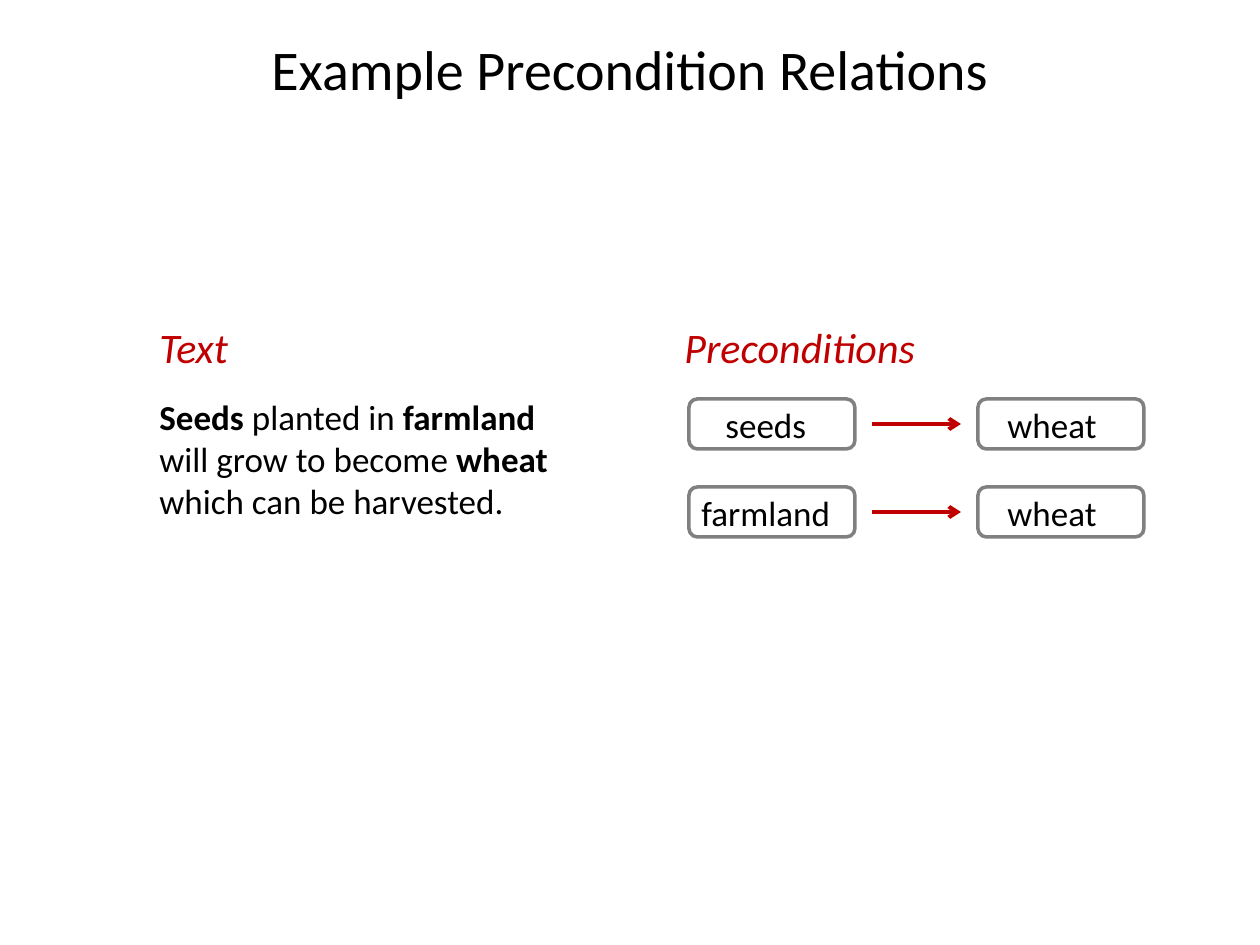
from dataclasses import dataclass

from lxml import etree
from pptx import Presentation
from pptx import util as u
from pptx.dml.color import RGBColor
from pptx.enum import shapes, text
from pptx.oxml.ns import qn

EMU_PER_PX = 914400 / 126
FONT = "Calibri"
BLACK, RED, GRAY = "000000", "C00000", "808080"
BOX_WIDTH, BOX_HEIGHT = 166, 50
CAUSE_LEFT, EFFECT_LEFT = 689, 978
ARROW_LEFT, ARROW_RIGHT = 872, 961
FIRST_TOP, ROW_PITCH = 399, 88
LABEL_HEIGHT = 58


@dataclass(frozen=True)
class Run:
    content: str
    bold: bool = False
    italic: bool = False


@dataclass(frozen=True)
class Label:
    content: str
    left: int
    width: int


@dataclass(frozen=True)
class Relation:
    cause: Label
    effect: Label


def px(length: int) -> u.Emu:
    return u.Emu(round(length * EMU_PER_PX))


def color(value: str) -> RGBColor:
    return RGBColor.from_string(value)


def add_runs(paragraph, runs: list[Run], size: int, fill: str) -> None:
    for item in runs:
        run = paragraph.add_run()
        run.text = item.content
        run.font.name = FONT
        run.font.size = u.Pt(size)
        run.font.bold = item.bold
        run.font.italic = item.italic
        run.font.color.rgb = color(fill)


def add_text(slide, left: int, top: int, width: int, height: int,
             runs: list[Run], size: int = 20, fill: str = BLACK) -> None:
    shape = slide.shapes.add_textbox(px(left), px(top), px(width), px(height))
    shape.text_frame.word_wrap = True
    add_runs(shape.text_frame.paragraphs[0], runs, size, fill)


def add_box(slide, left: int, top: int) -> None:
    shape = slide.shapes.add_shape(
        shapes.MSO_SHAPE.ROUNDED_RECTANGLE,
        px(left), px(top), px(BOX_WIDTH), px(BOX_HEIGHT))
    shape.shadow.inherit = False
    shape.fill.background()
    shape.line.color.rgb = color(GRAY)
    shape.line.width = u.Pt(2)


def add_arrow(slide, middle: int) -> None:
    connector = slide.shapes.add_connector(
        shapes.MSO_CONNECTOR.STRAIGHT,
        px(ARROW_LEFT), px(middle), px(ARROW_RIGHT), px(middle))
    connector.line.color.rgb = color(RED)
    connector.line.width = u.Pt(2.25)
    etree.SubElement(connector.line._get_or_add_ln(), qn("a:tailEnd"), type="arrow")
    etree.SubElement(connector._element.spPr, qn("a:effectLst"))


def add_relation(slide, relation: Relation, top: int) -> None:
    for label, box_left in ((relation.cause, CAUSE_LEFT), (relation.effect, EFFECT_LEFT)):
        add_text(slide, label.left, top - 2, label.width, LABEL_HEIGHT, [Run(label.content)])
        add_box(slide, box_left, top)
    add_arrow(slide, top + BOX_HEIGHT // 2)


def add_title(slide, content: str) -> None:
    title = slide.shapes.title
    title.left, title.top, title.width, title.height = px(0), px(0), px(1260), px(136)
    frame = title.text_frame
    frame.auto_size = text.MSO_AUTO_SIZE.NONE
    frame.vertical_anchor = text.MSO_ANCHOR.MIDDLE
    frame.paragraphs[0].alignment = text.PP_ALIGN.CENTER
    add_runs(frame.paragraphs[0], [Run(content)], 32, BLACK)


def main() -> None:
    presentation = Presentation()
    presentation.slide_width, presentation.slide_height = px(1260), px(945)
    slide = presentation.slides.add_slide(presentation.slide_layouts[5])
    add_title(slide, "Example Precondition Relations")

    # Column headings
    for heading, left in (("Text", 147), ("Preconditions", 672)):
        add_text(slide, left, 315, 382, 63, [Run(heading, italic=True)], 24, RED)

    # Sentence with its key terms in bold
    add_text(slide, 147, 389, 431, 140, [
        Run("Seeds", bold=True), Run(" planted in "),
        Run("farmland", bold=True), Run(" will grow to become "),
        Run("wheat", bold=True), Run(" which can be harvested."),
    ])

    # Precondition rows
    wheat = Label("wheat", 995, 130)
    relations = [
        Relation(Label("seeds", 713, 117), wheat),
        Relation(Label("farmland", CAUSE_LEFT, BOX_WIDTH), wheat),
    ]
    for row, relation in enumerate(relations):
        add_relation(slide, relation, FIRST_TOP + row * ROW_PITCH)

    presentation.save("out.pptx")


if __name__ == "__main__":
    main()
